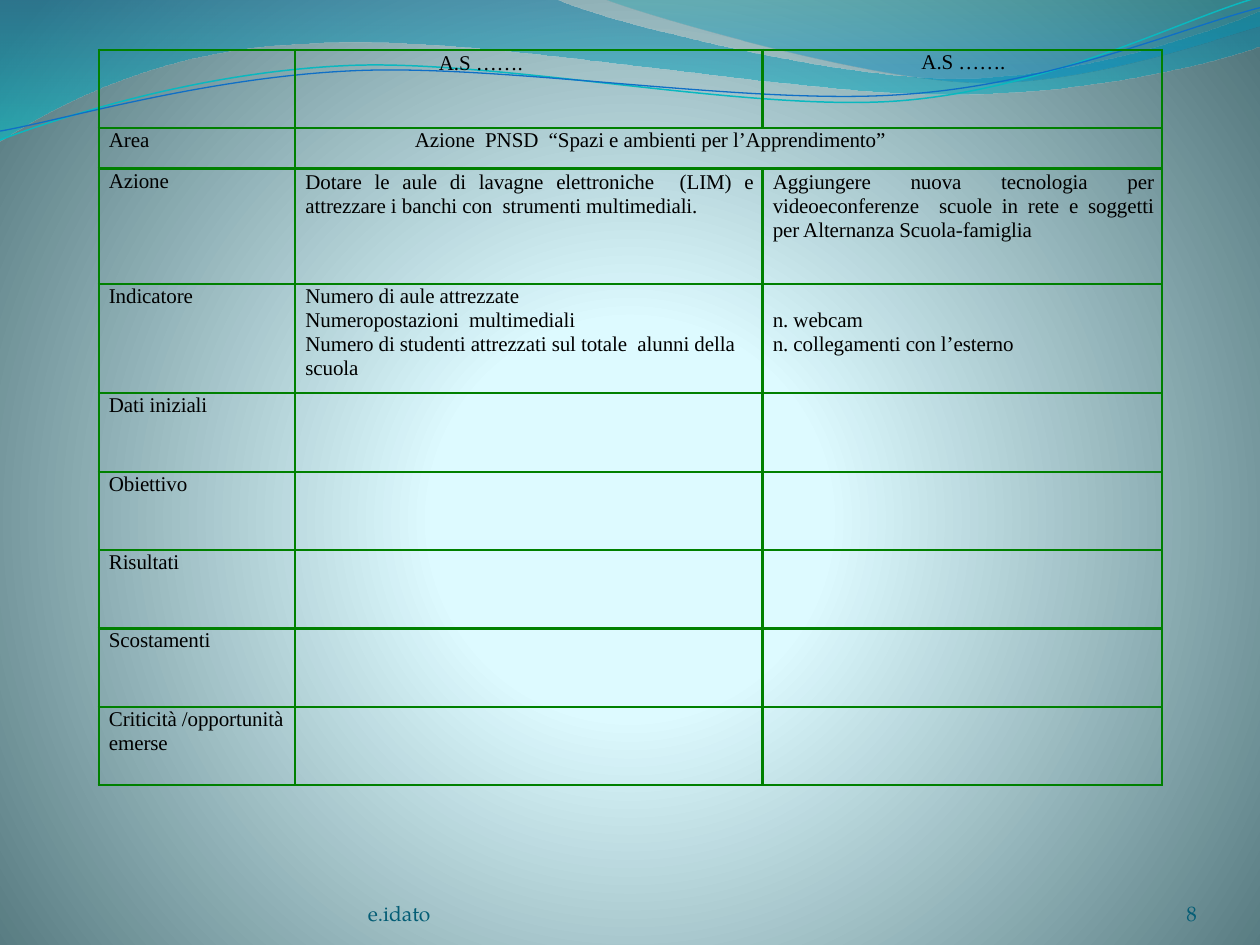
"""Build a planning table slide with a wave header and a radial background."""
from itertools import product

from lxml.etree import SubElement
from pptx import Presentation
from pptx.dml.color import RGBColor
from pptx.enum.text import MSO_ANCHOR as Anchor, PP_ALIGN as Align
from pptx.oxml.ns import qn
from pptx.util import Pt

BLACK = RGBColor(0x00, 0x00, 0x00)
GREEN = RGBColor(0x00, 0x80, 0x00)
FOOTER_BLUE = RGBColor(0x04, 0x5D, 0x75)
AQUA = RGBColor(0x0A, 0xB8, 0xBF)
BLUE = RGBColor(0x0F, 0x6F, 0xC6)
GLOW = [(0, RGBColor(0xDE, 0xFB, 0xFF), 100), (25, RGBColor(0xDD, 0xFA, 0xFF), 100),
        (100, RGBColor(0x52, 0x76, 0x7C), 100)]
WIDE_TINT = [(0, RGBColor(0x00, 0x74, 0xA1), 45), (100, RGBColor(0x00, 0xC6, 0xCF), 55)]
RIGHT_TINT = [(0, RGBColor(0x00, 0xA1, 0xA9), 30), (80, RGBColor(0x00, 0x8B, 0xBF), 45)]

TABLE_FONT, FOOTER_FONT = "Times New Roman", "TeX Gyre Pagella"

BANDS = [
    (WIDE_TINT, (0, 0), [
        [(317, -0.7)],
        [(343, 12), (478, 45), (546, 45)],
        [(614, 45), (690, 19), (720, 6.5)],
        [(720.7, 26)],
        [(708, 32), (626, 55), (537, 54)],
        [(448, 54), (275, 20), (185, 24.5)],
        [(93, 26), (33, 60), (-0.7, 81)]]),
    (RIGHT_TINT, (345, -0.7), [
        [(366, 8), (491, 44.6), (554, 47)],
        [(616, 50), (692, 23), (720, 15)],
        [(720, 0)]]),
]
WAVE_ROTATION = 357.3
WAVES = [
    (AQUA, 0.85, (-1.4, 63), [
        [(33.7, 51.6), (114, 29.5), (199.8, 29.9)],
        [(284.8, 30.3), (425.8, 67.2), (512.4, 64.9)],
        [(599, 62.4), (676.4, 25.7), (720.2, 15.6)]]),
    (BLUE, 0.75, (-1.1, 57.9), [
        [(33, 53.8), (118.3, 32.5), (204, 33)],
        [(290.5, 33.5), (428.9, 63.8), (515.5, 61.3)],
        [(601.4, 59.6), (678.5, 30.1), (721.4, 21.4)]]),
]

COLUMN_WIDTHS = [112.3, 267.1, 228.2]
ROW_HEIGHTS = [44.8, 23.1, 66, 62.5] + [44.8] * 5
LABELS = ["", "Area", "Azione", "Indicatore", "Dati iniziali", "Obiettivo",
          "Risultati", "Scostamenti", "Criticità /opportunità emerse"]
ENTRIES = {
    (0, 1): dict(lines=["A.S ……."], left=53.3, indent=28.8, top=0.6),
    (0, 2): dict(lines=["A.S ……."], left=1.4, align=Align.CENTER),
    (1, 1): dict(lines=["Azione  PNSD  “Spazi e ambienti per l’Apprendimento”"], left=68.4),
    (2, 1): dict(lines=["Dotare le aule di lavagne elettroniche  (LIM) e attrezzare "
                        "i banchi con  strumenti multimediali."],
                 align=Align.JUSTIFY, top=0.6, right=4.8),
    (2, 2): dict(lines=["Aggiungere nuova tecnologia per videoeconferenze  scuole in rete "
                        "e soggetti per Alternanza Scuola-famiglia"],
                 align=Align.JUSTIFY, top=0.6, right=4.4),
    (3, 1): dict(lines=["Numero di aule attrezzate", "Numeropostazioni  multimediali",
                        "Numero di studenti attrezzati sul totale  alunni della scuola"]),
    (3, 2): dict(lines=["n. webcam", "n. collegamenti con l’esterno"], top=13.6),
}
FOOTERS = [("8", 624.2, 59.8, Align.RIGHT), ("e.idato", 210.2, 264.2, Align.LEFT)]


def set_gradient(fill, owner, stops, radial=False):
    fill.gradient()
    gradient = owner.find(".//" + qn("a:gradFill"))
    for child in list(gradient):
        gradient.remove(child)
    stop_list = SubElement(gradient, qn("a:gsLst"))
    for position, color, opacity in stops:
        stop = SubElement(stop_list, qn("a:gs"), pos=str(position * 1000))
        tint = SubElement(stop, qn("a:srgbClr"), val=str(color))
        SubElement(tint, qn("a:alpha"), val=str(opacity * 1000))
    if radial:
        circle = SubElement(gradient, qn("a:path"), path="circle")
        SubElement(circle, qn("a:fillToRect"), l="10000", t="110000", r="10000", b="100000")
    else:
        SubElement(gradient, qn("a:lin"), ang="5400000", scaled="1")


def add_outline(slide, start, segments, close):
    builder = slide.shapes.build_freeform(*map(Pt, start))
    builder.add_line_segments([tuple(map(Pt, segment[-1])) for segment in segments], close=close)
    shape = builder.convert_to_shape()
    shape.shadow.inherit = False
    lines = shape.element.findall(".//" + qn("a:lnTo"))
    for line, segment in zip(lines, segments):
        if len(segment) == 3:
            curve = line.makeelement(qn("a:cubicBezTo"))
            for x, y in segment:
                SubElement(curve, qn("a:pt"), x=str(Pt(x) - shape.left), y=str(Pt(y) - shape.top))
            line.getparent().replace(line, curve)
    return shape


def add_run(paragraph, text, font_name, color):
    run = paragraph.add_run()
    run.text = text
    run.font.size = Pt(12)
    run.font.name = font_name
    run.font.color.rgb = color
    return run


def style_cell(cell):
    cell.margin_left = cell.margin_right = cell.margin_top = cell.margin_bottom = 0
    properties = cell._tc.get_or_add_tcPr()
    for side in ("lnL", "lnR", "lnT", "lnB"):
        border = SubElement(properties, qn("a:" + side), w=str(Pt(1.5)))
        SubElement(SubElement(border, qn("a:solidFill")), qn("a:srgbClr"), val=str(GREEN))
    cell.fill.background()


def write_cell(cell, lines, left=5.8, indent=0, align=Align.LEFT, top=0, right=0):
    cell.margin_top = Pt(top)
    cell.margin_right = Pt(right)
    frame = cell.text_frame
    for index, line in enumerate(lines):
        paragraph = frame.add_paragraph() if index else frame.paragraphs[0]
        paragraph.alignment = align
        paragraph.line_spacing = Pt(13.8)
        paragraph.space_before = Pt(0.6 if top == 0.6 else 0)
        properties = paragraph._p.get_or_add_pPr()
        properties.set("marL", str(Pt(left)))
        properties.set("indent", str(Pt(indent)))
        run = add_run(paragraph, line, TABLE_FONT, BLACK)
        run.font._element.set("spc", "-5")


def add_plan_table(slide):
    frame = slide.shapes.add_table(len(ROW_HEIGHTS), len(COLUMN_WIDTHS), Pt(56.4), Pt(28.4),
                                   Pt(sum(COLUMN_WIDTHS)), Pt(sum(ROW_HEIGHTS)))
    table = frame.table
    table.first_row = table.horz_banding = False
    for column, width in zip(table.columns, COLUMN_WIDTHS):
        column.width = Pt(width)
    for row, height in zip(table.rows, ROW_HEIGHTS):
        row.height = Pt(height)
    for row, column in product(range(len(ROW_HEIGHTS)), range(len(COLUMN_WIDTHS))):
        style_cell(table.cell(row, column))
    table.cell(1, 1).merge(table.cell(1, 2))
    for row, label in enumerate(LABELS):
        if label:
            write_cell(table.cell(row, 0), [label])
    for position, entry in ENTRIES.items():
        write_cell(table.cell(*position), **entry)


def add_footer(slide, text, left, width, align):
    frame = slide.shapes.add_textbox(Pt(left), Pt(500.4), Pt(width), Pt(28.8)).text_frame
    frame.word_wrap = True
    frame.vertical_anchor = Anchor.BOTTOM
    frame.margin_left = frame.margin_right = frame.margin_top = frame.margin_bottom = 0
    frame.paragraphs[0].alignment = align
    add_run(frame.paragraphs[0], text, FOOTER_FONT, FOOTER_BLUE)


def main():
    presentation = Presentation()
    presentation.slide_width, presentation.slide_height = Pt(720), Pt(540)
    slide = presentation.slides.add_slide(presentation.slide_layouts[6])
    set_gradient(slide.background.fill, slide.element, GLOW, radial=True)
    for stops, start, segments in BANDS:
        band = add_outline(slide, start, segments, close=True)
        set_gradient(band.fill, band.element, stops)
        band.line.fill.background()
    for color, width, start, segments in WAVES:
        wave = add_outline(slide, start, segments, close=False)
        wave.rotation = WAVE_ROTATION
        wave.fill.background()
        wave.line.color.rgb = color
        wave.line.width = Pt(width)
    add_plan_table(slide)
    for footer in FOOTERS:
        add_footer(slide, *footer)
    presentation.save("out.pptx")


if __name__ == "__main__":
    main()
